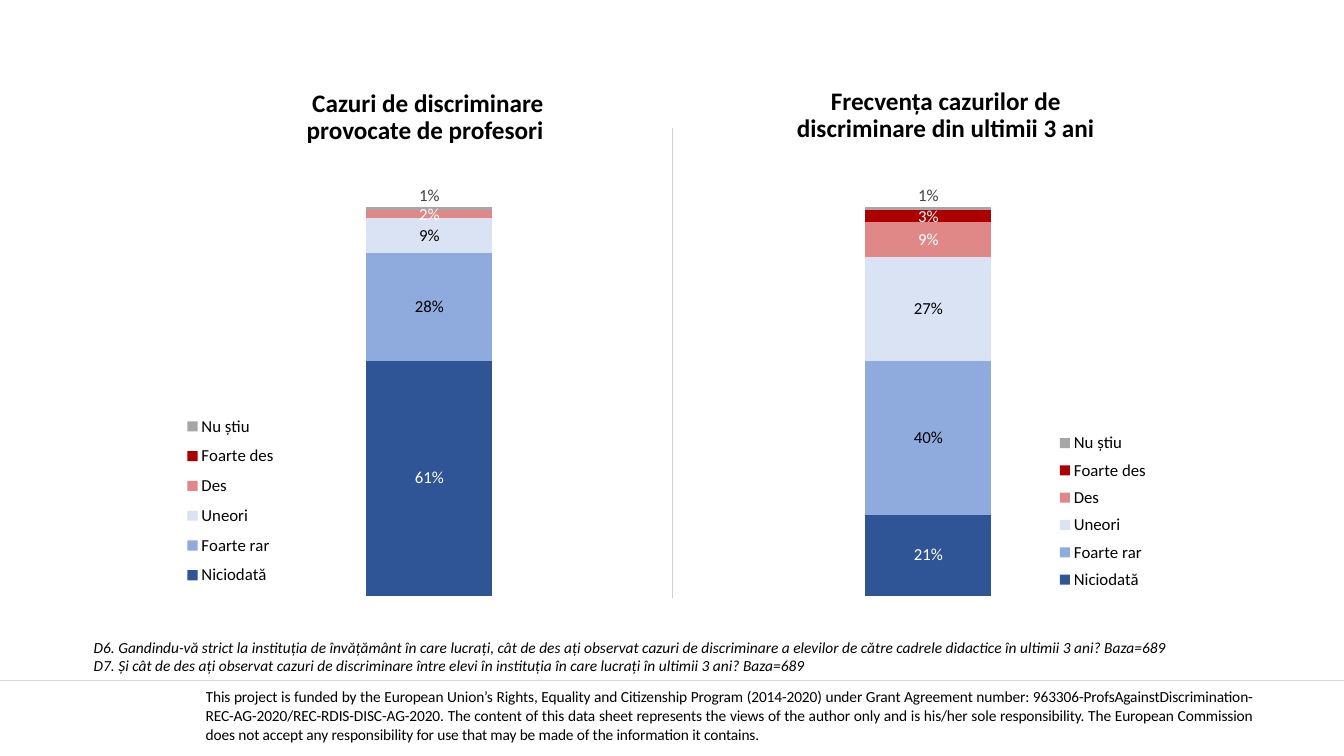
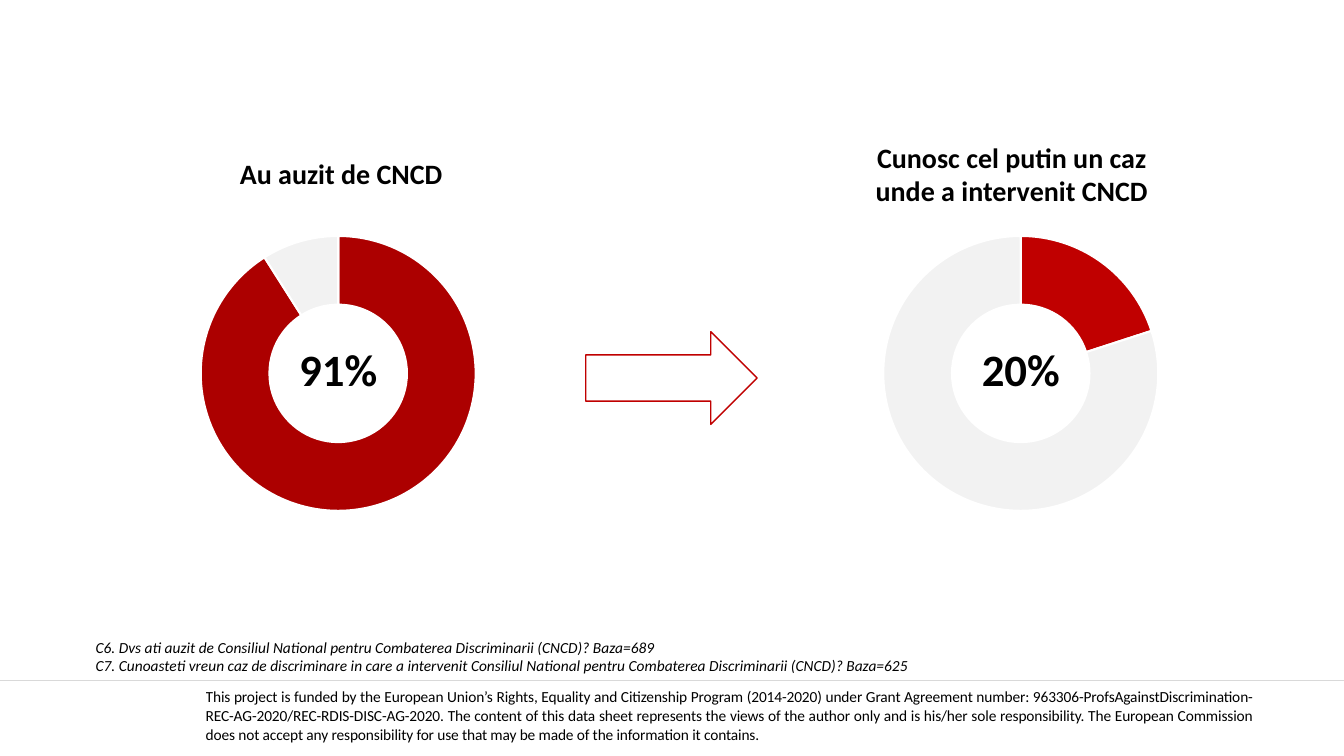
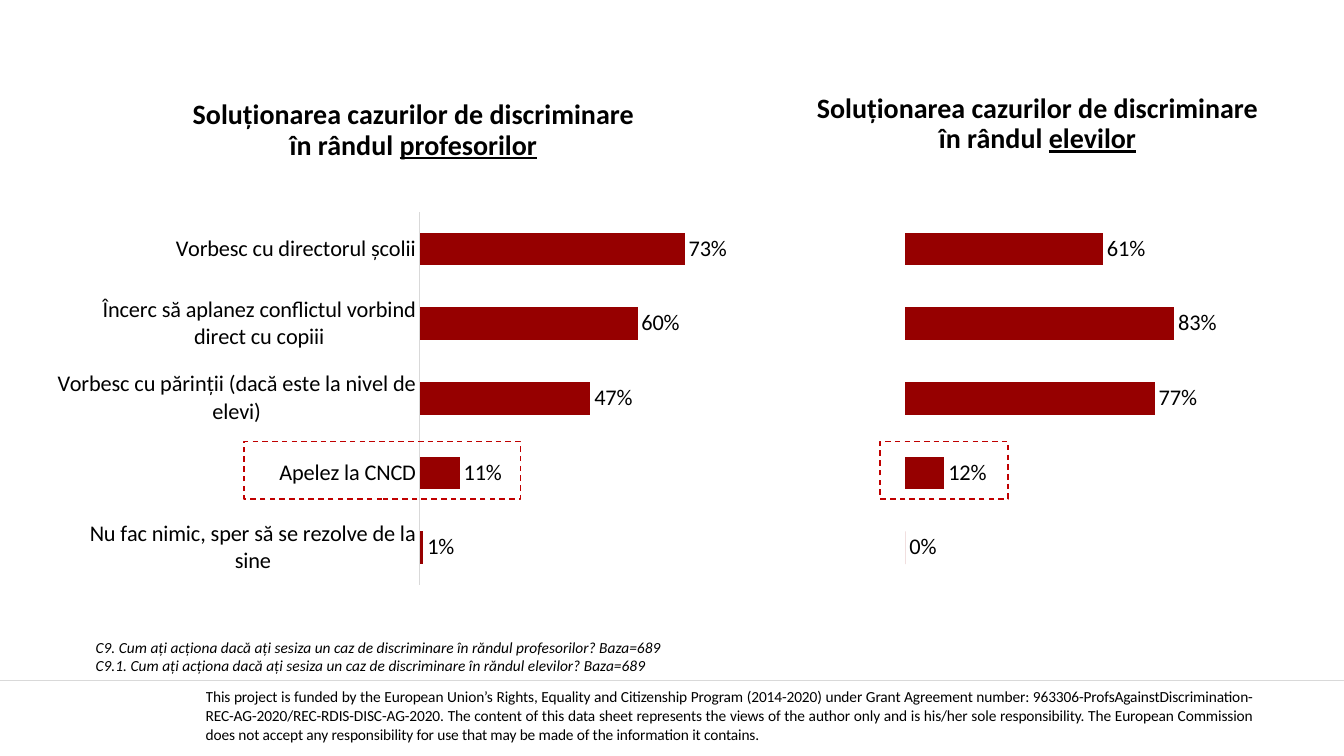
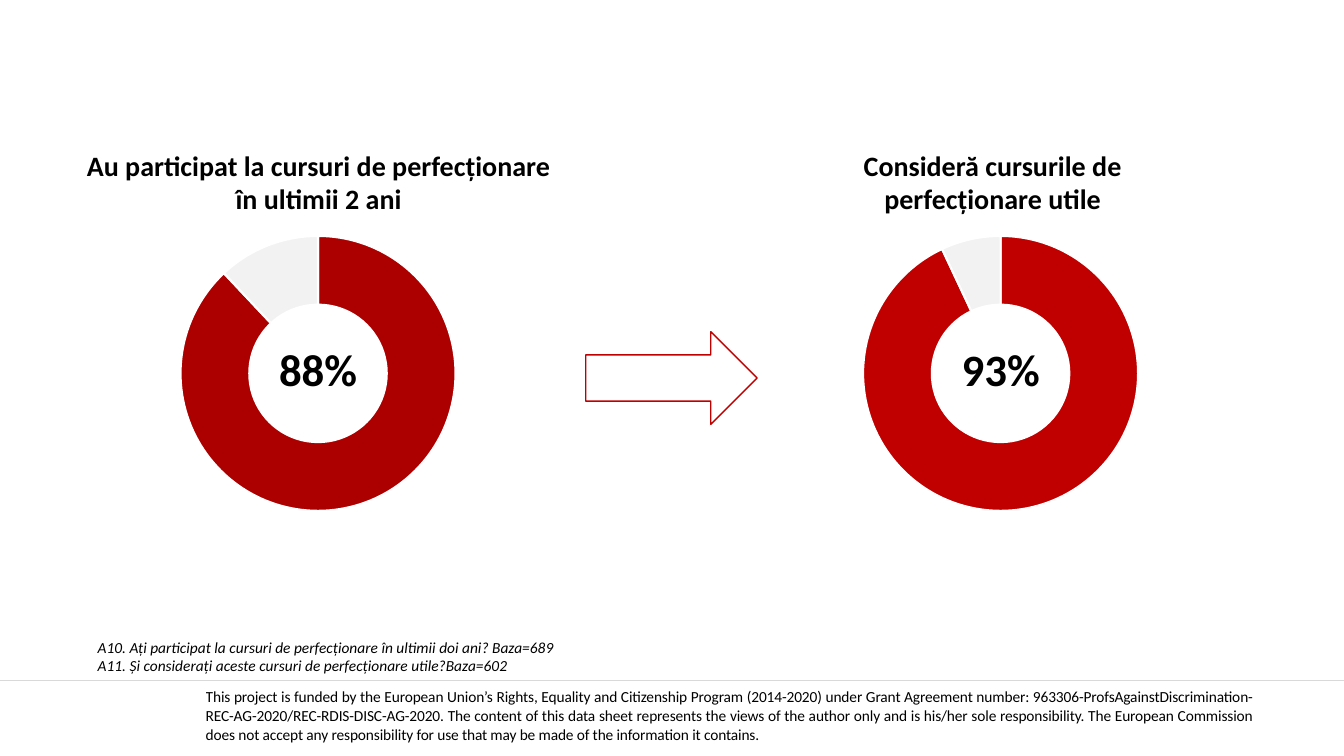
import lxml.etree
import pptx
import pptx.chart.data
import pptx.dml.color
import pptx.enum.chart
import pptx.enum.dml
import pptx.enum.shapes
import pptx.enum.text
import pptx.oxml
import pptx.oxml.ns
import pptx.util

Inches = pptx.util.Inches
qn = pptx.oxml.ns.qn
Align = pptx.enum.text.PP_ALIGN
Anchor = pptx.enum.text.MSO_ANCHOR
ChartType = pptx.enum.chart.XL_CHART_TYPE
LabelPosition = pptx.enum.chart.XL_LABEL_POSITION
LegendPosition = pptx.enum.chart.XL_LEGEND_POSITION
Shape = pptx.enum.shapes.MSO_SHAPE

FONT = "Calibri"
BLACK, WHITE, RED, DARK_RED, BAR_RED = "000000", "FFFFFF", "C00000", "AC0000", "960000"
PALE, LINE_GREY, DIVIDER_GREY = "F2F2F2", "D9D9D9", "D0CECE"
PERCENT = "###0%"

# Answer, bar colour, label colour
FREQUENCIES = [
    ("Niciodată", "2F5597", WHITE),
    ("Foarte rar", "8FAADC", BLACK),
    ("Uneori", "DAE3F3", BLACK),
    ("Des", "E08888", WHITE),
    ("Foarte des", DARK_RED, WHITE),
    ("Nu știu", "A6A6A6", "404040"),
]
SOLUTIONS = [
    "Vorbesc cu directorul școlii",
    "Încerc să aplanez conflictul vorbind direct cu copiii",
    "Vorbesc cu părinții (dacă este la nivel de elevi)",
    "Apelez la CNCD",
    "Nu fac nimic, sper să se rezolve de la sine",
]
FUNDING = (
    "This project is funded by the European Union’s Rights, Equality and Citizenship Program "
    "(2014-2020) under Grant Agreement number: 963306-ProfsAgainstDiscrimination-REC-AG-2020/"
    "REC-RDIS-DISC-AG-2020. The content of this data sheet represents the views of the author "
    "only and is his/her sole responsibility. The European Commission does not accept any "
    "responsibility for use that may be made of the information it contains."
)


def rgb(value):
    return pptx.dml.color.RGBColor.from_string(value)


def style_font(font, size, color=BLACK, bold=False, italic=False):
    font.name = FONT
    font.size = pptx.util.Pt(size)
    font.bold = bold
    font.italic = italic
    font.color.rgb = rgb(color)


def style_line(line, color, width):
    line.color.rgb = rgb(color)
    line.width = pptx.util.Pt(width)


def write(frame, lines, size, align=Align.LEFT, anchor=Anchor.TOP, spacing=1.0,
          wrap=True, underlined=None, **style):
    """Fill a text frame, one paragraph a line; the word in underlined gets its own span."""
    frame.word_wrap = wrap
    frame.auto_size = pptx.enum.text.MSO_AUTO_SIZE.NONE
    frame.vertical_anchor = anchor
    for index, line in enumerate(lines):
        para = frame.add_paragraph() if index else frame.paragraphs[0]
        para.alignment = align
        para.line_spacing = spacing
        parts = line.partition(underlined) if underlined else (line,)
        for part in filter(None, parts):
            span = para.add_run()
            span.text = part
            style_font(span.font, size, **style)
            if part == underlined:
                span.font.underline = True


def set_layout(parent, index, **values):
    """Give a chart part a manual layout, as fractions of the chart."""
    for old in parent.findall(qn("c:layout")):
        parent.remove(old)
    layout = lxml.etree.Element(qn("c:layout"))
    manual = lxml.etree.SubElement(layout, qn("c:manualLayout"))
    for name, value in values.items():
        lxml.etree.SubElement(manual, qn("c:" + name), val=str(value))
    parent.insert(index, layout)


class Report:
    def __init__(self):
        self.deck = pptx.Presentation()
        self.deck.slide_width = Inches(13.33)
        self.deck.slide_height = Inches(7.5)
        self.layout = self.deck.slide_layouts[5]
        self.slide = None

    def new_slide(self):
        self.slide = self.deck.slides.add_slide(self.layout)

    def share_footer(self):
        """Build the footer on the current slide and move it to the layout."""
        frame = self.slide.shapes.add_table(
            1, 1, Inches(2.04), Inches(6.59), Inches(10.39), Inches(1.04))
        frame.table.first_row = False
        frame.table.horz_banding = False
        cell = frame.table.cell(0, 0)
        cell.fill.background()
        cell.margin_left = cell.margin_right = cell.margin_top = cell.margin_bottom = 0
        cell.vertical_anchor = Anchor.MIDDLE
        para = cell.text_frame.paragraphs[0]
        para.alignment = Align.JUSTIFY
        span = para.add_run()
        span.text = FUNDING
        style_font(span.font, 11)
        # Letter spacing in hundredths of a point
        frame.element.xpath(".//a:rPr")[0].set("spc", "-10")
        rule = self.line(0, 6.75, 13.33, 6.75, LINE_GREY)
        for number, shape in enumerate((frame, rule), start=101):
            shape.element.xpath("./*/p:cNvPr")[0].set("id", str(number))
            self.layout.shapes.element.append(shape.element)

    def line(self, x1, y1, x2, y2, color):
        connector = self.slide.shapes.add_connector(
            pptx.enum.shapes.MSO_CONNECTOR.STRAIGHT,
            Inches(x1), Inches(y1), Inches(x2), Inches(y2))
        style_line(connector.line, color, 0.5)
        lxml.etree.SubElement(connector.element.spPr, qn("a:effectLst"))
        return connector

    def title(self, lines, left, top, width, height, size=20, **style):
        box = self.slide.shapes.title
        box.left, box.top = Inches(left), Inches(top)
        box.width, box.height = Inches(width), Inches(height)
        write(box.text_frame, lines, size, align=Align.CENTER, bold=True, **style)

    def text(self, lines, left, top, width, height, size=20, **style):
        box = self.slide.shapes.add_textbox(
            Inches(left), Inches(top), Inches(width), Inches(height))
        write(box.text_frame, lines, size, **style)

    def heading(self, lines, left, top, width, height, **style):
        self.text(lines, left, top, width, height, align=Align.CENTER, bold=True, **style)

    def questions(self, lines, left=0.85):
        self.text(lines, left, 6.28, 12.05, 0.47, size=11, italic=True)

    def outline(self, kind, left, top, width, height, fill=None, dashed=False):
        shape = self.slide.shapes.add_shape(
            kind, Inches(left), Inches(top), Inches(width), Inches(height))
        shape.shadow.inherit = False
        style_line(shape.line, RED, 1)
        if fill:
            shape.fill.solid()
            shape.fill.fore_color.rgb = rgb(fill)
        else:
            shape.fill.background()
        if dashed:
            shape.line.dash_style = pptx.enum.dml.MSO_LINE.DASH

    def chart(self, kind, categories, series, box, plot, number_format):
        data = pptx.chart.data.CategoryChartData(number_format=number_format)
        data.categories = categories
        for name, values in series:
            data.add_series(name, values)
        chart = self.slide.shapes.add_chart(kind, *map(Inches, box), data).chart
        chart.has_title = False
        chart.has_legend = False
        style_font(chart.font, 10)
        clear = pptx.oxml.parse_xml(
            f"<c:spPr {pptx.oxml.ns.nsdecls('c', 'a')}>"
            "<a:noFill/><a:ln><a:noFill/></a:ln></c:spPr>")
        chart.element.find(qn("c:chart")).addnext(clear)
        x, y, w, h = plot
        set_layout(chart.element.xpath("c:chart/c:plotArea")[0], 0, layoutTarget="inner",
                   xMode="edge", yMode="edge", x=x, y=y, w=w, h=h)
        return chart

    def bar_chart(self, kind, categories, series, box, plot, gap, maximum):
        chart = self.chart(kind, categories, series, box, plot, PERCENT)
        chart.plots[0].gap_width = gap
        chart.plots[0].vary_by_categories = False
        axis = chart.value_axis
        axis.minimum_scale, axis.maximum_scale = 0, maximum
        axis.has_major_gridlines = False
        axis.visible = False
        return chart

    def color_series(self, series, color, label_color, size, position):
        series.format.fill.solid()
        series.format.fill.fore_color.rgb = rgb(color)
        labels = series.data_labels
        labels.show_value = True
        labels.number_format = PERCENT
        labels.number_format_is_linked = False
        labels.position = position
        style_font(labels.font, size, label_color)

    def frequency_chart(self, left, values, side, legend_box):
        names = [name for name, _, _ in FREQUENCIES]
        series = [(name, [value]) for name, value in zip(names, values)]
        chart = self.bar_chart(
            ChartType.COLUMN_STACKED_100, ["1"], series, (left, 1.83, 6.03, 4.41),
            (0.356, 0.05, 0.518, 0.875), 150, 1)
        chart.plots[0].overlap = 100
        chart.category_axis.visible = False
        for item, value, (_, color, label_color) in zip(
                chart.plots[0].series, values, FREQUENCIES):
            self.color_series(item, color, label_color, 12, LabelPosition.CENTER)
            item.data_labels.show_value = value > 0
        # The last, thin part has its label above the column
        label = chart.plots[0].series[len(names) - 1].points[0].data_label
        label.position = LabelPosition.CENTER
        style_font(label.font, 12, FREQUENCIES[-1][2])
        set_layout(chart.element.xpath(".//c:dLbl")[0], 1, x=0, y=-0.03)
        chart.has_legend = True
        chart.legend.position = side
        chart.legend.include_in_layout = False
        style_font(chart.legend.font, 12)
        x, y, w, h = legend_box
        set_layout(chart.element.xpath(".//c:legend")[0], 1,
                   xMode="edge", yMode="edge", x=x, y=y, w=w, h=h)

    def solution_chart(self, left, categories, values, maximum, show_categories):
        chart = self.bar_chart(
            ChartType.BAR_CLUSTERED, categories, [("Series 1", values)],
            (left, 1.96, 7.05, 3.98), (0.508, 0.035, 0.41, 0.931), 128, maximum)
        self.color_series(chart.plots[0].series[0], BAR_RED, BLACK, 16,
                          LabelPosition.OUTSIDE_END)
        axis = chart.category_axis
        axis.reverse_order = True
        axis.visible = show_categories
        if show_categories:
            axis.major_tick_mark = pptx.enum.chart.XL_TICK_MARK.NONE
            style_font(axis.tick_labels.font, 16)
            style_line(axis.format.line, LINE_GREY, 0.75)

    def share_ring(self, left, share, color):
        """Draw a doughnut with its percentage in the middle."""
        chart = self.chart(
            ChartType.DOUGHNUT, ["1", "2"], [("Series 1", [share, 100 - share])],
            (left, 2.2, 4.33, 3.01), (0.185, 0.045, 0.63, 0.91), "General")
        chart.element.xpath(".//c:holeSize")[0].set("val", "56")
        for index, fill in enumerate((color, PALE)):
            part = chart.plots[0].series[0].points[index].format
            part.fill.solid()
            part.fill.fore_color.rgb = rgb(fill)
            style_line(part.line, WHITE, 1.5)
        self.heading([f"{share}%"], left + 1.67, 3.34, 0.99, 0.64, size=32, wrap=False)

    def ring_pair(self, left, shares):
        for offset, share, color in zip((0, 6.77), shares, (DARK_RED, RED)):
            self.share_ring(left + offset, share, color)
        self.outline(Shape.RIGHT_ARROW, 5.81, 3.29, 1.7, 0.92, fill=WHITE)


def main():
    report = Report()
    centred = {"anchor": Anchor.MIDDLE, "spacing": 0.9}

    report.new_slide()
    report.share_footer()
    report.frequency_chart(0.55, [0.61, 0.28, 0.09, 0.02, 0, 0.01],
                           LegendPosition.LEFT, (0.203, 0.5, 0.17, 0.424))
    report.frequency_chart(5.5, [0.21, 0.4, 0.27, 0.09, 0.03, 0.01],
                           LegendPosition.RIGHT, (0.817, 0.543, 0.17, 0.385))
    report.line(6.67, 1.27, 6.67, 5.93, DIVIDER_GREY)
    report.title(["Cazuri de discriminare provocate de profesori "],
                 2.91, 0.85, 2.67, 0.64, size=18, **centred)
    report.heading(["Frecvența cazurilor de discriminare din ultimii 3 ani"],
                   7.65, 0.83, 3.46, 0.64, size=18, **centred)
    report.questions([
        "D6. Gandindu-vă strict la instituția de învățământ în care lucrați, cât de des ați "
        "observat cazuri de discriminare a elevilor de către cadrele didactice în ultimii "
        "3 ani? Baza=689",
        "D7. Și cât de des ați observat cazuri de discriminare între elevi în instituția în "
        "care lucrați în ultimii 3 ani? Baza=689",
    ], left=0.83)

    report.new_slide()
    report.ring_pair(1.19, (91, 20))
    report.title(["Au auzit de CNCD"], 2.27, 1.5, 2.23, 0.44, wrap=False)
    report.heading(["Cunosc cel putin un caz", "unde a intervenit CNCD"],
                   8.48, 1.34, 3.11, 0.77)
    report.questions([
        "C6. Dvs ati auzit de Consiliul National pentru Combaterea Discriminarii (CNCD)? "
        "Baza=689",
        "C7. Cunoasteti vreun caz de discriminare in care a intervenit Consiliul National "
        "pentru Combaterea Discriminarii (CNCD)? Baza=625",
    ])

    report.new_slide()
    report.solution_chart(0.57, SOLUTIONS, [0.73, 0.6, 0.47, 0.11, 0.01], 0.8, True)
    report.solution_chart(5.4, ["1", "2", "3", "4", "5"],
                          [0.61, 0.83, 0.77, 0.12, 0], 0.9, False)
    for add, group, left, height in ((report.title, "profesorilor", 1.3, 0.88),
                                     (report.heading, "elevilor", 7.49, 0.75)):
        add(["Soluționarea cazurilor de discriminare", f"în rândul {group}"],
            left, 0.86, 5.6, height, underlined=group, **centred)
    for left, width in ((2.42, 2.74), (8.73, 1.27)):
        report.outline(Shape.RECTANGLE, left, 4.38, width, 0.57, dashed=True)
    report.questions([
        "C9. Cum ați acționa dacă ați sesiza un caz de discriminare în răndul profesorilor? "
        "Baza=689",
        "C9.1. Cum ați acționa dacă ați sesiza un caz de discriminare în răndul elevilor? "
        "Baza=689",
    ])

    report.new_slide()
    report.ring_pair(0.99, (88, 93))
    report.title(["Au participat la cursuri de perfecționare", "în ultimii 2 ani"],
                 0.74, 1.42, 4.84, 0.77, wrap=False)
    report.heading(["Consideră cursurile de perfecționare utile"], 8.29, 1.42, 3.11, 0.77)
    report.questions([
        "A10. Ați participat la cursuri de perfecționare în ultimii doi ani? Baza=689",
        "A11. Și considerați aceste cursuri de perfecționare utile?Baza=602",
    ], left=0.87)

    report.deck.save("out.pptx")


if __name__ == "__main__":
    main()
